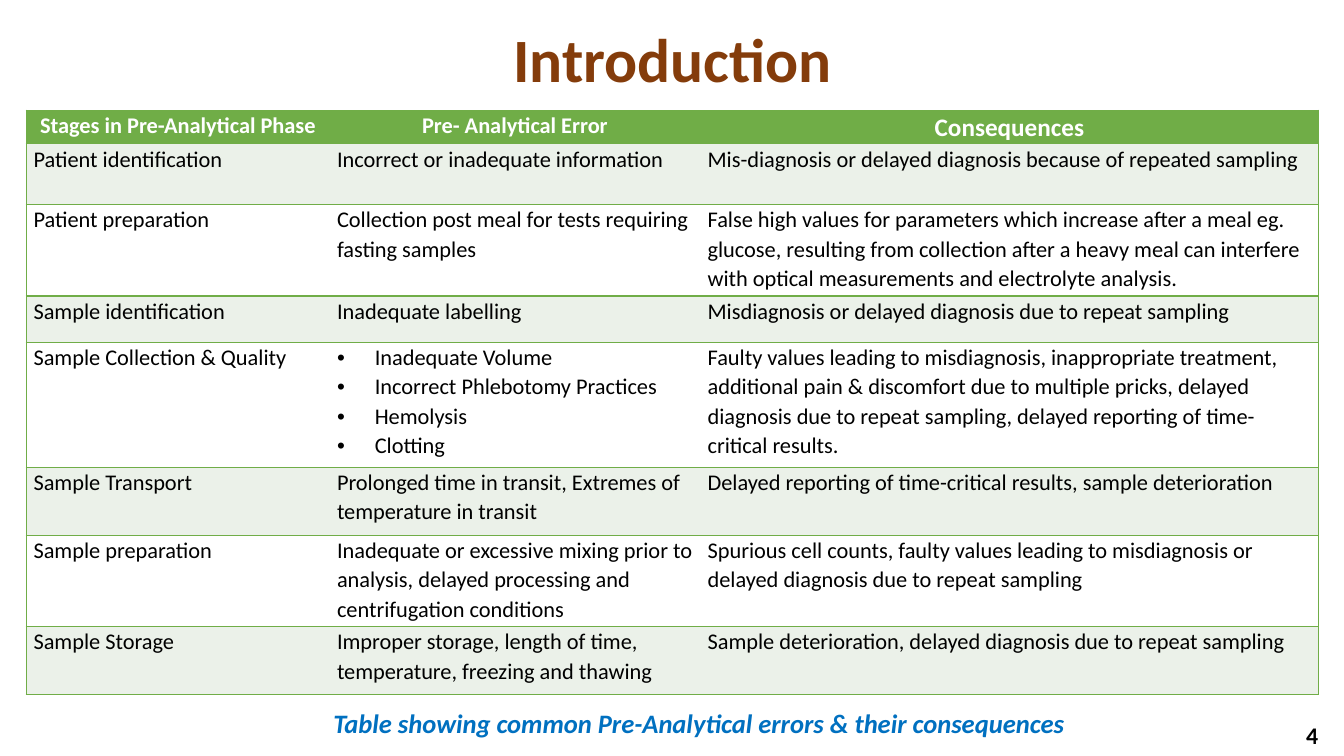
from lxml import etree
from pptx import Presentation
from pptx.dml.color import RGBColor
from pptx.enum.text import MSO_ANCHOR as Anchor, PP_ALIGN as Align
from pptx.oxml.ns import qn
from pptx.util import Pt

PX = 9525  # EMU per px, 96 px to the inch
FONT = "Calibri"
COLORS = {
    "title": "843C0B",
    "green": "70AD47",
    "band": "EBF1E9",
    "white": "FFFFFF",
    "black": "000000",
    "caption": "0070C0",
}

HEADINGS = [("Stages in Pre-Analytical Phase", 16), ("Pre- Analytical Error", 16), ("Consequences", 18)]
COLUMN_WIDTHS = [289, 353, 589]
HEADING_HEIGHT = 32

# Row height, stage, error (a list is bulleted), consequences
STAGES = [
    (58, "Patient identification", "Incorrect or inadequate information",
     "Mis-diagnosis or delayed diagnosis because of repeated sampling"),
    (87, "Patient preparation", "Collection post meal for tests requiring fasting samples",
     "False high values for parameters which increase after a meal eg. glucose, resulting from "
     "collection after a heavy meal can interfere with optical measurements and electrolyte analysis."),
    (44, "Sample identification", "Inadequate labelling",
     "Misdiagnosis or delayed diagnosis due to repeat sampling"),
    (119, "Sample Collection & Quality",
     ["Inadequate Volume", "Incorrect Phlebotomy Practices", "Hemolysis", "Clotting"],
     "Faulty values leading to misdiagnosis, inappropriate treatment, additional pain & discomfort "
     "due to multiple pricks, delayed diagnosis due to repeat sampling, delayed reporting of "
     "time-critical results."),
    (65, "Sample Transport", "Prolonged time in transit, Extremes of temperature in transit",
     "Delayed reporting of time-critical results, sample deterioration"),
    (87, "Sample preparation",
     "Inadequate or excessive mixing prior to analysis, delayed processing and centrifugation conditions",
     "Spurious cell counts, faulty values leading to misdiagnosis or delayed diagnosis due to repeat sampling"),
    (65, "Sample Storage", "Improper storage, length of time, temperature, freezing and thawing",
     "Sample deterioration, delayed diagnosis due to repeat sampling"),
]


def px(*lengths):
    return [length * PX for length in lengths]


def color(name):
    return RGBColor.from_string(COLORS[name])


def style(paragraph, size, color_name, bold=False, italic=False, align=Align.LEFT, spacing=None):
    font = paragraph.font
    font.name, font.size = FONT, Pt(size)
    font.bold, font.italic = bold, italic
    font.color.rgb = color(color_name)
    paragraph.alignment = align
    paragraph.line_spacing = spacing


def add_bullet(paragraph):
    properties = paragraph._p.get_or_add_pPr()
    indent = 36 * PX
    properties.set("marL", str(indent))
    properties.set("indent", str(-indent))
    etree.SubElement(properties, qn("a:buFont")).set("typeface", "Arial")
    etree.SubElement(properties, qn("a:buChar")).set("char", "•")
    # Default run properties come after the bullet
    properties.append(properties.find(qn("a:defRPr")))


def set_borders(cell, visible_sides):
    properties = cell._tc.get_or_add_tcPr()
    for side in "LRTB":
        line = etree.SubElement(properties, qn(f"a:ln{side}"), w=str(Pt(1)))
        if side in visible_sides:
            fill = etree.SubElement(line, qn("a:solidFill"))
            etree.SubElement(fill, qn("a:srgbClr"), val=COLORS["green"])
        else:
            etree.SubElement(line, qn("a:noFill"))


def fill_cell(cell, content, fill_name, sides, bulleted=False, **text_style):
    cell.margin_left, cell.margin_right, cell.margin_top, cell.margin_bottom = px(7, 7, 0, 0)
    set_borders(cell, sides)
    cell.fill.solid()
    cell.fill.fore_color.rgb = color(fill_name)
    cell.text = content
    for paragraph in cell.text_frame.paragraphs:
        style(paragraph, spacing=1.07, **text_style)
        if bulleted:
            add_bullet(paragraph)


def add_error_table(slide):
    heights = [HEADING_HEIGHT] + [stage[0] for stage in STAGES]
    frame = slide.shapes.add_table(len(heights), len(COLUMN_WIDTHS),
                                   *px(25, 105, sum(COLUMN_WIDTHS), sum(heights)))
    table = frame.table
    table.horz_banding = False
    for column, width in zip(table.columns, COLUMN_WIDTHS):
        column.width = width * PX
    for row, height in zip(table.rows, heights):
        row.height = height * PX

    # Only the outer vertical edges are drawn
    column_sides = ["LTB", "TB", "RTB"]
    for cell, (heading, size), sides in zip(table.rows[0].cells, HEADINGS, column_sides):
        fill_cell(cell, heading, "green", sides, size=size, color_name="white",
                  bold=True, align=Align.CENTER)
    for number, (_, *contents) in enumerate(STAGES, start=1):
        band = "band" if number % 2 else "white"
        for cell, content, sides in zip(table.rows[number].cells, contents, column_sides):
            bulleted = isinstance(content, list)
            fill_cell(cell, "\n".join(content) if bulleted else content, band, sides,
                      bulleted, size=16, color_name="black")


def add_title(slide, text):
    title = slide.shapes.title
    title.left, title.top, title.width, title.height = px(89, 15, 1104, 90)
    title.text_frame.text = text
    title.text_frame.vertical_anchor = Anchor.MIDDLE
    style(title.text_frame.paragraphs[0], 44, "title", bold=True, align=Align.CENTER, spacing=0.9)


def add_label(slide, text, box, wrap=True, anchor=Anchor.TOP, **text_style):
    frame = slide.shapes.add_textbox(*px(*box)).text_frame
    frame.word_wrap = wrap
    frame.vertical_anchor = anchor
    frame.text = text
    style(frame.paragraphs[0], bold=True, **text_style)


def main():
    deck = Presentation()
    deck.slide_width, deck.slide_height = px(1280, 720)
    slide = deck.slides.add_slide(deck.slide_layouts[5])

    add_title(slide, "Introduction")
    add_error_table(slide)
    # Caption and page number
    add_label(slide, "Table showing common Pre-Analytical errors & their consequences",
              (308, 669, 727, 40), wrap=False, size=19, color_name="caption", italic=True)
    add_label(slide, "4", (977, 681, 288, 38), anchor=Anchor.MIDDLE,
              size=17, color_name="black", align=Align.RIGHT)

    deck.save("out.pptx")


if __name__ == "__main__":
    main()
